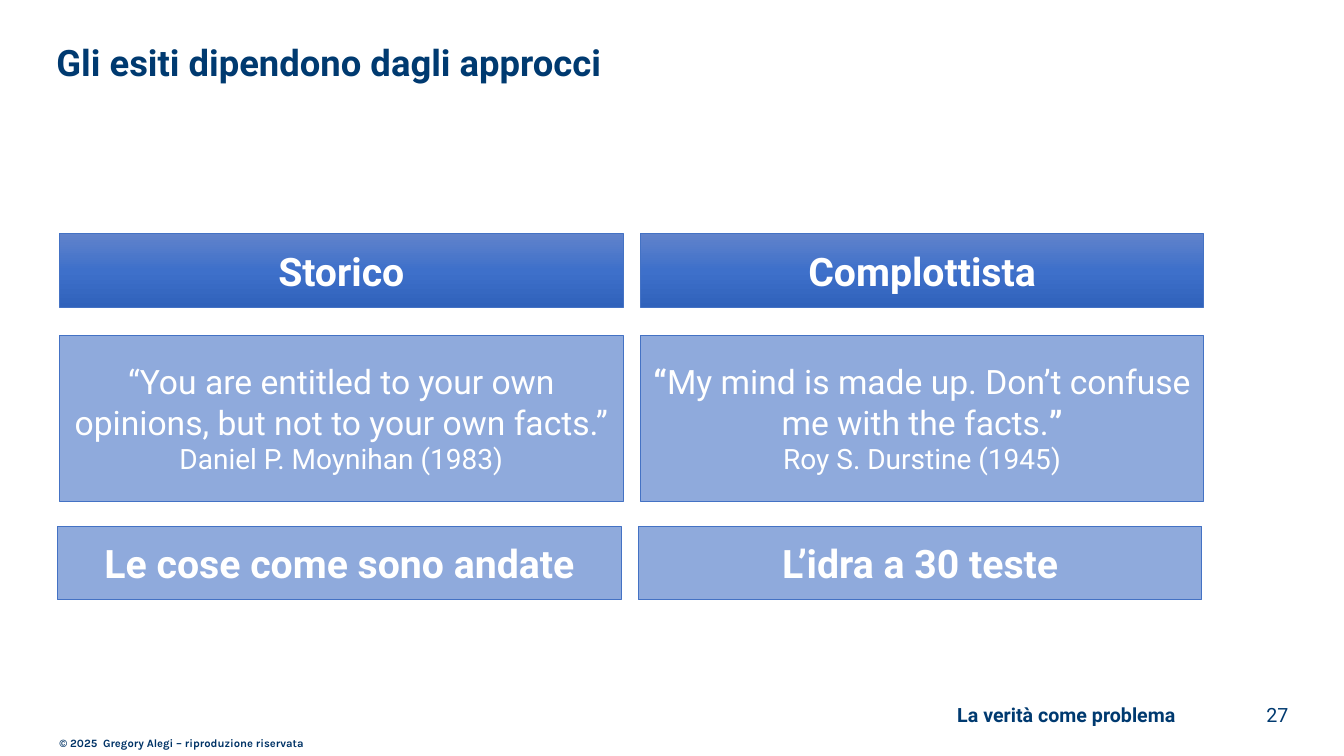
from copy import deepcopy

from pptx import Presentation
from pptx.dml.color import RGBColor
from pptx.enum.shapes import MSO_SHAPE
from pptx.enum.text import MSO_ANCHOR as Anchor, MSO_AUTO_SIZE as AutoSize, PP_ALIGN as Align
from pptx.oxml.ns import qn
from pptx.util import Inches, Pt

COLORS = {
    "navy": "003A70", "copyright": "003366", "white": "FFFFFF",
    "border": "4472C4", "panel": "8FAADC",
    "header_top": "6183CB", "header_middle": "3E70CA", "header_bottom": "3062BB",
}
COLUMN_LEFT, COLUMN_STEP, COLUMN_WIDTH = 0.59, 5.76, 5.59
ROWS = {"header": (0, 2.32, 0.73), "quote": (0, 3.33, 1.64), "outcome": (-0.02, 5.22, 0.73)}
COLUMNS = [
    {
        "header": "Storico",
        "quote": [("“You are entitled to your own opinions, but not to your own facts.”", False)],
        "author": "Daniel P. Moynihan (1983)",
        "outcome": "Le cose come sono andate",
    },
    {
        "header": "Complottista",
        "quote": [("“", True), ("My mind is made up. Don’t confuse me with the facts.", False), ("”", True)],
        "author": "Roy S. Durstine (1945)",
        "outcome": "L’idra a 30 teste",
    },
]


def rgb(name):
    """Return the named colour."""
    return RGBColor.from_string(COLORS[name])


def style_paragraph(paragraph, size, color, bold=False, align=Align.LEFT, font_name="Roboto"):
    """Set the alignment and font of a paragraph."""
    paragraph.alignment = align
    font = paragraph.font
    font.name, font.size, font.bold = font_name, Pt(size), bold
    font.color.rgb = rgb(color)


def fill_gradient(shape, names):
    """Fill a shape from top to bottom with three evenly spaced colours."""
    shape.fill.gradient()
    stop_list = shape.fill._xPr.find(qn("a:gradFill")).find(qn("a:gsLst"))
    stop_list.append(deepcopy(stop_list[-1]))
    for index, (stop, name) in enumerate(zip(shape.fill.gradient_stops, names)):
        stop.color.rgb = rgb(name)
        stop.position = index / (len(names) - 1)
    shape.fill.gradient_angle = 270


def add_box(slide, column, row):
    """Add an empty bordered box in a grid cell."""
    offset, top, height = ROWS[row]
    left = COLUMN_LEFT + column * COLUMN_STEP + offset
    shape = slide.shapes.add_shape(
        MSO_SHAPE.RECTANGLE, Inches(left), Inches(top), Inches(COLUMN_WIDTH), Inches(height))
    shape.shadow.inherit = False
    shape.line.color.rgb = rgb("border")
    shape.line.width = Pt(0.5)
    shape.text_frame.word_wrap = True
    shape.text_frame.vertical_anchor = Anchor.MIDDLE
    if row == "header":
        fill_gradient(shape, ["header_top", "header_middle", "header_bottom"])
    else:
        shape.fill.solid()
        shape.fill.fore_color.rgb = rgb("panel")
    return shape


def add_heading(slide, column, row, text):
    """Add a box with one bold line."""
    paragraph = add_box(slide, column, row).text_frame.paragraphs[0]
    paragraph.text = text
    style_paragraph(paragraph, 28, "white", True, Align.CENTER)


def add_quote(slide, column, runs, author):
    """Add a box with a quotation and its author."""
    text_frame = add_box(slide, column, "quote").text_frame
    quote = text_frame.paragraphs[0]
    style_paragraph(quote, 24, "white", align=Align.CENTER)
    for text, bold in runs:
        run = quote.add_run()
        run.text = text
        if bold:
            run.font.bold = True
    credit = text_frame.add_paragraph()
    credit.text = author
    style_paragraph(credit, 20, "white", align=Align.CENTER)


def add_label(slide, text, place, **style):
    """Add a line of text and return its frame."""
    text_frame = slide.shapes.add_textbox(*map(Inches, place)).text_frame
    text_frame.word_wrap = True
    text_frame.paragraphs[0].text = text
    style_paragraph(text_frame.paragraphs[0], **style)
    return text_frame


def add_footer(slide, text, left, width, bold):
    """Add a right-aligned footer text."""
    text_frame = add_label(slide, text, (left, 6.81, width, 0.4),
                           size=14, color="navy", bold=bold, align=Align.RIGHT)
    text_frame.vertical_anchor = Anchor.BOTTOM
    text_frame.margin_left = text_frame.margin_right = Inches(0.08)
    text_frame.margin_top = text_frame.margin_bottom = 0


def set_title(slide, text):
    """Place and format the title."""
    title = slide.shapes.title
    title.left, title.top, title.width, title.height = map(Inches, (0.46, 0.4, 12.27, 1.09))
    text_frame = title.text_frame
    text_frame.auto_size = AutoSize.NONE
    text_frame.vertical_anchor = Anchor.TOP
    paragraph = text_frame.paragraphs[0]
    paragraph.text = text
    paragraph.line_spacing = 0.9
    style_paragraph(paragraph, 26, "navy", True)


def main():
    """Build and save the slide."""
    presentation = Presentation()
    presentation.slide_width, presentation.slide_height = Inches(13.33), Inches(7.5)
    slide = presentation.slides.add_slide(presentation.slide_layouts[5])
    set_title(slide, "Gli esiti dipendono dagli approcci")
    for column, content in enumerate(COLUMNS):
        add_heading(slide, column, "header", content["header"])
        add_quote(slide, column, content["quote"], content["author"])
        add_heading(slide, column, "outcome", content["outcome"])
    add_footer(slide, "La verità come problema", 3.24, 8.5, True)
    add_footer(slide, "27", 11.92, 0.94, False)
    add_label(slide, "© 2025  Gregory Alegi – riproduzione riservata", (0.49, 7.26, 2.94, 0.24),
              size=8, color="copyright", bold=True, font_name="Karla")
    presentation.save("out.pptx")


if __name__ == "__main__":
    main()
